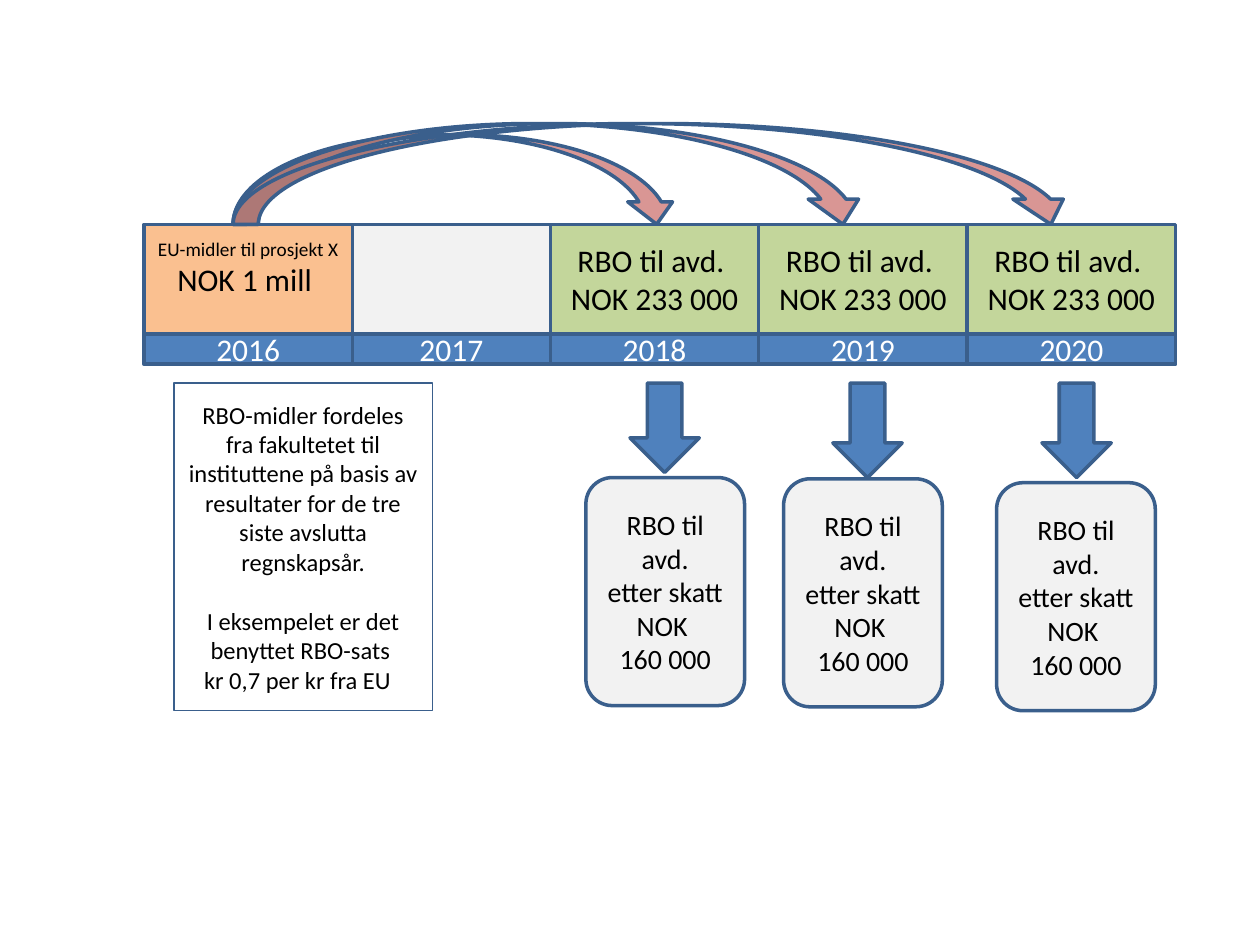
from itertools import accumulate
from pptx import Presentation
from pptx.dml.color import RGBColor
from pptx.enum.shapes import MSO_SHAPE as Preset
from pptx.enum.text import MSO_ANCHOR as Anchor, PP_ALIGN as Align
from pptx.util import Pt

ORANGE = RGBColor(0xFA, 0xC0, 0x90)
GREEN = RGBColor(0xC3, 0xD6, 0x9B)
GREY = RGBColor(0xF2, 0xF2, 0xF2)
BLUE = RGBColor(0x4F, 0x81, 0xBD)
PINK = RGBColor(0xD9, 0x96, 0x94)
OUTLINE = RGBColor(0x3A, 0x5F, 0x8C)
BLACK = RGBColor(0, 0, 0)
WHITE = RGBColor(0xFF, 0xFF, 0xFF)

GRANT = [("EU-midler til prosjekt X", 11), ("NOK 1 mill ", 18)]
PAYOUT = [("RBO til avd. ", 18), ("NOK 233 000", 18)]
AFTER_TAX = [(text, 16) for text in ("RBO til avd.", "etter skatt", "NOK ", "160 000")]
NOTE = [
    ("RBO-midler fordeles fra fakultetet til instituttene på basis av "
     "resultater for de tre siste avslutta regnskapsår.", 14),
    ("I eksempelet er det benyttet RBO-sats ", 14),
    ("kr 0,7 per kr fra EU  ", 14),
]
YEARS = [
    ("2016", 119.1, ORANGE, GRANT),
    ("2017", 113.1, GREY, []),
    ("2018", 119.1, GREEN, PAYOUT),
    ("2019", 119.1, GREEN, PAYOUT),
    ("2020", 119.1, GREEN, PAYOUT),
]
TRANSFERS = [(77, 254.9), (70.6, 362.9), (70.6, 481.7)]
TAXED = [(360, 51.1, 334.8, 272.9), (475.9, 54, 447.8, 273.6), (595.4, 54, 569.5, 275.8)]

LEFT, CELL_TOP, CELL_HEIGHT = 82.3, 128.2, 62.6
YEAR_TOP, YEAR_HEIGHT = CELL_TOP + CELL_HEIGHT, 17.4
TRANSFER_LEFT = 133.2
LOWER_TOP = 218.9

presentation = Presentation()
presentation.slide_width, presentation.slide_height = Pt(720), Pt(540)
slide = presentation.slides.add_slide(presentation.slide_layouts[6])


def add_box(preset, left, top, width, height, fill, lines=(), color=BLACK, line_width=2):
    shape = slide.shapes.add_shape(preset, Pt(left), Pt(top), Pt(width), Pt(height))
    shape.shadow.inherit = False
    if fill is None:
        shape.fill.background()
    else:
        shape.fill.solid()
        shape.fill.fore_color.rgb = fill
    shape.line.color.rgb = OUTLINE
    shape.line.width = Pt(line_width)
    frame = shape.text_frame
    frame.word_wrap = True
    frame.vertical_anchor = Anchor.MIDDLE
    for index, (text, size) in enumerate(lines):
        paragraph = frame.add_paragraph() if index else frame.paragraphs[0]
        paragraph.alignment = Align.CENTER
        run = paragraph.add_run()
        run.text = text
        run.font.name = "Calibri"
        run.font.size = Pt(size)
        run.font.color.rgb = color
    return shape


widths = [width for _, width, _, _ in YEARS]
lefts = list(accumulate(widths[:-1], initial=LEFT))

for left, (year, width, fill, lines) in zip(lefts, YEARS):
    cell = add_box(Preset.RECTANGLE, left, CELL_TOP, width, CELL_HEIGHT, fill, lines)
    if lines is GRANT:
        cell.text_frame.margin_bottom = Pt(17)
        for top, span in TRANSFERS:
            add_box(Preset.CURVED_DOWN_ARROW, TRANSFER_LEFT, top, span, CELL_TOP - top, PINK)

for left, (year, width, _, _) in zip(lefts, YEARS):
    add_box(Preset.RECTANGLE, left, YEAR_TOP, width, YEAR_HEIGHT, BLUE, [(year, 18)], WHITE)

note = add_box(Preset.RECTANGLE, 99.4, LOWER_TOP, 147.6, 187.2, None, NOTE, line_width=0)
note.text_frame.paragraphs[1].space_before = Pt(17)

for arrow_left, arrow_height, box_left, box_top in TAXED:
    add_box(Preset.DOWN_ARROW, arrow_left, LOWER_TOP, 39.6, arrow_height, BLUE)
    add_box(Preset.ROUNDED_RECTANGLE, box_left, box_top, 90.7, 130.3, GREY, AFTER_TAX)

presentation.save("out.pptx")
